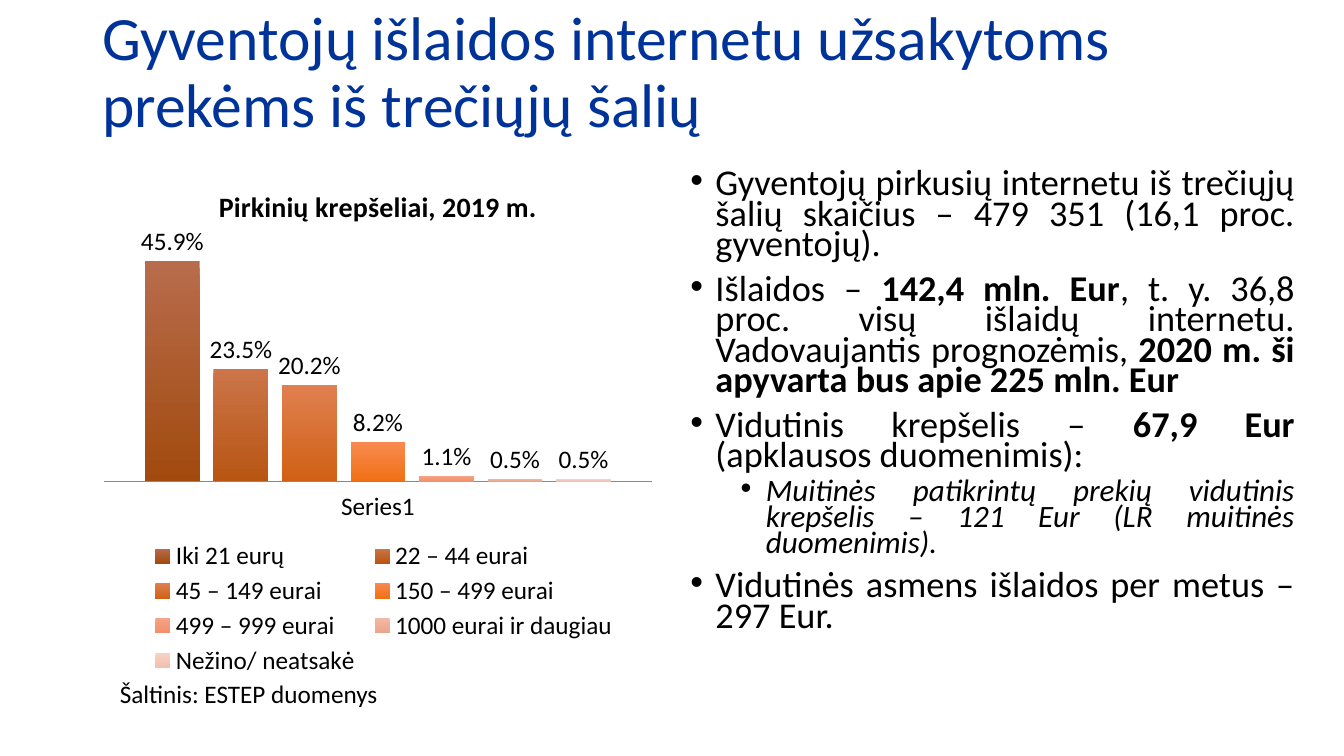
"""Builds a slide on residents' online spending in third countries."""
from lxml import etree
from pptx import Presentation
from pptx.chart.data import CategoryChartData
from pptx.dml.color import RGBColor
from pptx.enum.chart import XL_CHART_TYPE, XL_LABEL_POSITION, XL_LEGEND_POSITION, XL_TICK_LABEL_POSITION, XL_TICK_MARK
from pptx.enum.text import MSO_ANCHOR, PP_ALIGN
from pptx.oxml import parse_xml
from pptx.oxml.ns import nsdecls, qn
from pptx.util import Pt

COLUMN = XL_CHART_TYPE.COLUMN_CLUSTERED
OUTSIDE = XL_LABEL_POSITION.OUTSIDE_END
BOTTOM = XL_LEGEND_POSITION.BOTTOM
LOW = XL_TICK_LABEL_POSITION.LOW
NO_TICK = XL_TICK_MARK.NONE
TOP, MIDDLE = MSO_ANCHOR.TOP, MSO_ANCHOR.MIDDLE
LEFT, JUSTIFY = PP_ALIGN.LEFT, PP_ALIGN.JUSTIFY

BLUE = RGBColor(0x00, 0x33, 0x99)
BLACK = RGBColor(0x00, 0x00, 0x00)
GREY = RGBColor(0x89, 0x89, 0x89)

BASKETS = [
    ("Iki 21 eurų", 0.459, RGBColor(0xB8, 0x6C, 0x4C), RGBColor(0xA2, 0x4A, 0x0E)),
    ("22 – 44 eurai", 0.235, RGBColor(0xCC, 0x75, 0x4A), RGBColor(0xB8, 0x55, 0x12)),
    ("45 – 149 eurai", 0.202, RGBColor(0xE0, 0x80, 0x50), RGBColor(0xD0, 0x60, 0x14)),
    ("150 – 499 eurai", 0.082, RGBColor(0xF8, 0x8A, 0x50), RGBColor(0xF0, 0x70, 0x14)),
    ("499 – 999 eurai", 0.011, RGBColor(0xF6, 0xA2, 0x84), RGBColor(0xF0, 0x90, 0x6C)),
    ("1000 eurai ir daugiau", 0.005, RGBColor(0xF4, 0xB8, 0xA4), RGBColor(0xEA, 0xA4, 0x8C)),
    ("Nežino/ neatsakė", 0.005, RGBColor(0xF8, 0xD0, 0xC2), RGBColor(0xF0, 0xC0, 0xB0)),
]

POINTS = [
    (0, [("Gyventojų pirkusių internetu iš trečiųjų šalių skaičius – 479 351 (16,1 proc. gyventojų).", False)]),
    (0, [("Išlaidos – ", False), ("142,4 mln. Eur", True),
         (", t. y. 36,8 proc. visų išlaidų internetu. Vadovaujantis prognozėmis, ", False),
         ("2020 m. ši apyvarta bus apie 225 mln. Eur", True)]),
    (0, [("Vidutinis krepšelis – ", False), ("67,9 Eur ", True), ("(apklausos duomenimis):", False)]),
    (1, [("Muitinės patikrintų prekių vidutinis krepšelis – 121 Eur (LR muitinės duomenimis).", False)]),
    (0, [("Vidutinės asmens išlaidos per metus – 297 Eur.", False)]),
]


def add_text(p, text, font="Calibri", size=18, color=BLACK, bold=False, italic=False):
    """Add a formatted run to a paragraph."""
    r = p.add_run()
    r.text = text
    r.font.name, r.font.size = font, Pt(size)
    r.font.bold, r.font.italic = bold, italic
    r.font.color.rgb = color


def set_layout(element, x, y, w, h, inner=False):
    """Place a chart part by fractions of the chart area."""
    for old in element.findall(qn("c:layout")):
        element.remove(old)
    target = '<c:layoutTarget val="inner"/>' if inner else ""
    sizes = "".join(f'<c:{k} val="{v}"/>' for k, v in zip("xywh", (x, y, w, h)))
    layout = parse_xml(
        f'<c:layout {nsdecls("c")}><c:manualLayout>{target}<c:xMode val="edge"/>'
        f'<c:yMode val="edge"/>{sizes}</c:manualLayout></c:layout>')
    element.insert(0 if inner else 1, layout)


class SlideBuilder:
    """Holds the font and the current slide."""

    def __init__(self, s, font="Calibri"):
        self.s, self.font = s, font

    def box(self, x, y, w, h, anchor=TOP):
        """Add an empty wrapping text box and return its frame."""
        tf = self.s.shapes.add_textbox(Pt(x), Pt(y), Pt(w), Pt(h)).text_frame
        tf.word_wrap = True
        tf.vertical_anchor = anchor
        return tf

    def line(self, text, x, y, w, h, anchor=TOP, spacing=1.0, **style):
        """Add a text box with one paragraph."""
        p = self.box(x, y, w, h, anchor).paragraphs[0]
        p.alignment, p.line_spacing = LEFT, spacing
        add_text(p, text, self.font, **style)

    def bullets(self, points, x, y, w, h):
        """Add a justified list with two levels."""
        tf = self.box(x, y, w, h)
        for i, (level, runs) in enumerate(points):
            p = tf.paragraphs[0] if i == 0 else tf.add_paragraph()
            pPr = p._p.get_or_add_pPr()
            pPr.set("marL", str(Pt(18 + 36 * level)))
            pPr.set("indent", str(Pt(-18)))
            etree.SubElement(pPr, qn("a:buFont")).set("typeface", "Arial")
            etree.SubElement(pPr, qn("a:buChar")).set("char", "•")
            p.level, p.alignment, p.line_spacing = level, JUSTIFY, 0.7
            p.space_before = Pt(0 if i == 0 else 5 if level else 10)
            for text, bold in runs:
                add_text(p, text, self.font, size=22.2 if level else 25.9, bold=bold, italic=level == 1)

    def columns(self, title, category, baskets, x, y, w, h):
        """Add a column chart with one series per basket."""
        data = CategoryChartData(number_format="0.0%")
        data.categories = [category]
        for name, value, _, _ in baskets:
            data.add_series(name, [value])
        chart = self.s.shapes.add_chart(COLUMN, Pt(x), Pt(y), Pt(w), Pt(h), data).chart
        chart.font.name, chart.font.size = self.font, Pt(18)
        chart.font.color.rgb = BLACK
        chart.has_title = True
        add_text(chart.chart_title.text_frame.paragraphs[0], title, self.font, size=20, bold=True)
        chart.chart_title.include_in_layout = False
        chart.has_legend = True
        chart.legend.position = BOTTOM
        chart.legend.include_in_layout = False
        set_layout(chart.legend._element, 0.09, 0.72, 0.84, 0.28)
        set_layout(chart._chartSpace.chart.plotArea, 0.02, 0.146, 0.96, 0.467, inner=True)
        self.axes(chart)
        plot = chart.plots[0]
        plot.gap_width, plot.overlap, plot.vary_by_categories = 150, -25, False
        plot.has_data_labels = True
        labels = plot.data_labels
        labels.show_value, labels.position = True, OUTSIDE
        labels.number_format, labels.number_format_is_linked = "0.0%", False
        for series, (_, _, light, dark) in zip(plot.series, baskets):
            fill = series.format.fill
            fill.gradient()
            fill.gradient_angle = 270
            for stop, color in zip(fill.gradient_stops, (light, dark)):
                stop.color.rgb = color

    def axes(self, chart):
        """Hide the value axis and keep a plain base line."""
        value = chart.value_axis
        value.minimum_scale, value.maximum_scale = 0, 0.5
        value.has_major_gridlines = value.visible = False
        base = chart.category_axis
        base.major_tick_mark = base.minor_tick_mark = NO_TICK
        base.tick_label_position = LOW
        base.format.line.color.rgb = GREY
        base.format.line.width = Pt(0.75)


def main():
    """Build and save the slide."""
    prs = Presentation()
    prs.slide_width, prs.slide_height = Pt(960), Pt(540)
    b = SlideBuilder(prs.slides.add_slide(prs.slide_layouts[6]))
    b.line("Gyventojų išlaidos internetu užsakytoms prekėms iš trečiųjų šalių",
           66, 1, 828, 104, MIDDLE, 0.9, size=44, color=BLUE)
    b.columns("Pirkinių krepšeliai, 2019 m.", "Series1", BASKETS, 66, 119, 408, 367)
    b.bullets(POINTS, 486, 119, 446, 367)
    b.line("Šaltinis: ESTEP duomenys", 78.5, 481, 417, 29)
    prs.save("out.pptx")


if __name__ == "__main__":
    main()
